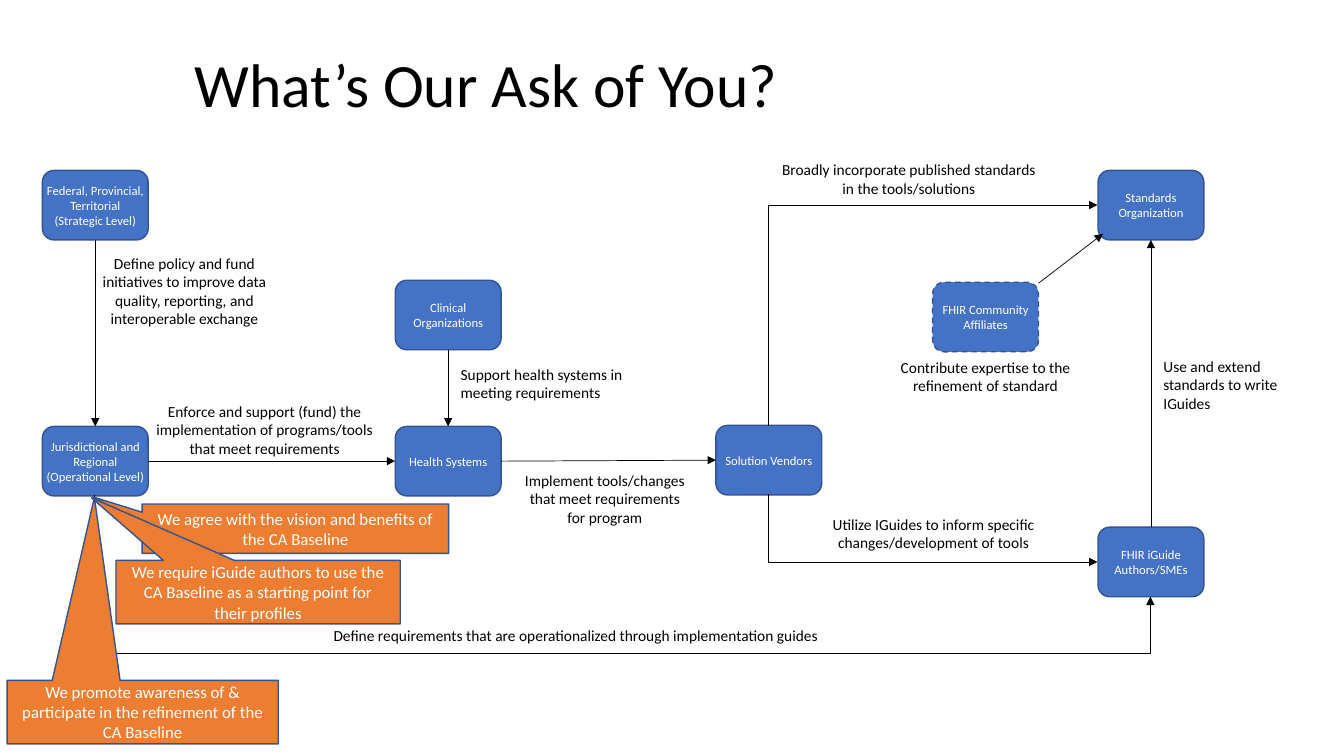
from lxml import etree
from pptx import Presentation
from pptx.dml.color import RGBColor
from pptx.enum import dml, shapes, text
from pptx.oxml import ns
from pptx.util import Inches, Pt

BLUE = RGBColor(0x44, 0x72, 0xC4)
OUTLINE = RGBColor(0x32, 0x54, 0x91)
ORANGE = RGBColor(0xED, 0x7D, 0x31)
BLACK = RGBColor(0, 0, 0)
WHITE = RGBColor(0xFF, 0xFF, 0xFF)
FONT = "Calibri"
NODE_W, NODE_H = 1.05, 0.69
TOP, LEFT, BOTTOM, RIGHT = range(4)  # connection sites of a node
CENTER, START = text.PP_ALIGN.CENTER, text.PP_ALIGN.LEFT

# name: (left, top, wording)
NODES = {
    "vendors": (7.1, 4.22, "Solution Vendors"),
    "standards": (10.89, 1.69, "Standards Organization"),
    "authors": (10.89, 5.23, "FHIR iGuide Authors/SMEs"),
    "health": (3.92, 4.23, "Health Systems"),
    "regional": (0.42, 4.23, "Jurisdictional and Regional (Operational Level)"),
    "affiliates": (9.25, 2.8, "FHIR Community Affiliates"),
    "clinical": (3.92, 2.78, "Clinical Organizations"),
    "federal": (0.42, 1.69, "Federal, Provincial, Territorial (Strategic Level)"),
}

# left, top, width, height, alignment, wording
LABELS = [
    (0.81, 2.47, 2.04, 0.84, CENTER, "Define policy and fund initiatives to improve data "
     "quality, reporting, and interoperable exchange"),
    (11.44, 3.49, 1.58, 0.66, START, "Use and extend standards to write IGuides"),
    (3.21, 6.16, 5.16, 0.29, START,
     "Define requirements that are operationalized through implementation guides"),
    (1.37, 3.94, 2.51, 0.66, CENTER, "Enforce and support (fund) the implementation of "
     "programs/tools that meet requirements"),
    (5.08, 4.62, 1.84, 0.66, CENTER,
     "Implement tools/changes that meet requirements for program"),
    (7.62, 1.54, 2.79, 0.47, CENTER,
     "Broadly incorporate published standards in the tools/solutions"),
    (7.63, 5.06, 3.26, 0.47, CENTER,
     "Utilize IGuides to inform specific changes/development of tools"),
    (4.47, 3.57, 1.96, 0.47, START, "Support health systems in meeting requirements"),
    (8.71, 3.5, 2.13, 0.47, CENTER, "Contribute expertise to the refinement of standard"),
]

STRAIGHT_ARROWS = [
    ("federal", BOTTOM, "regional", TOP),
    ("clinical", BOTTOM, "health", TOP),
    ("regional", RIGHT, "health", LEFT),
    ("health", RIGHT, "vendors", LEFT),
    ("authors", TOP, "standards", BOTTOM),
]

# left, top, width, height, pointer adjustments, wording
CALLOUTS = [
    (1.41, 5, 3.04, 0.49, (-0.661, -0.645),
     "We agree with the vision and benefits of the CA Baseline"),
    (1.15, 5.56, 2.82, 0.63, (-0.586, -1.487),
     "We require iGuide authors to use the CA Baseline as a starting point for their profiles"),
    (0.07, 6.75, 2.69, 0.63, (-0.178, -3.38),
     "We promote awareness of & participate in the refinement of the CA Baseline"),
]


def write(sp, wording, size, color, align=CENTER):
    tf = sp.text_frame
    tf.text = wording
    tf.word_wrap = True
    p = tf.paragraphs[0]
    p.alignment = align
    font = p.runs[0].font
    font.name, font.size, font.color.rgb = FONT, Pt(size), color
    return tf


def add_box(s, kind, box, fill, wording, size):
    sp = s.shapes.add_shape(kind, *map(Inches, box))
    sp.shadow.inherit = False
    sp.fill.solid()
    sp.fill.fore_color.rgb = fill
    sp.line.color.rgb = OUTLINE
    sp.line.width = Pt(1)
    tf = write(sp, wording, size, WHITE)
    tf.vertical_anchor = text.MSO_ANCHOR.MIDDLE
    return sp


def add_node(s, left, top, wording):
    sp = add_box(s, shapes.MSO_SHAPE.ROUNDED_RECTANGLE, (left, top, NODE_W, NODE_H),
                 BLUE, wording, 9)
    sp.text_frame.margin_left = sp.text_frame.margin_right = 0
    return sp


def add_callout(s, left, top, width, height, pointer, wording):
    sp = add_box(s, shapes.MSO_SHAPE.RECTANGULAR_CALLOUT, (left, top, width, height),
                 ORANGE, wording, 12)
    sp.adjustments[0], sp.adjustments[1] = pointer


def add_label(s, left, top, width, height, align, wording):
    sp = s.shapes.add_textbox(*map(Inches, (left, top, width, height)))
    write(sp, wording, 11, BLACK, align)


def add_arrow(s, x1, y1, x2, y2, kind=shapes.MSO_CONNECTOR.STRAIGHT):
    line = s.shapes.add_connector(kind, *map(Inches, (x1, y1, x2, y2)))
    line.line.color.rgb = BLACK
    line.line.width = Pt(0.5)
    etree.SubElement(line.line._get_or_add_ln(), ns.qn("a:tailEnd"), type="triangle")
    etree.SubElement(line._element.spPr, ns.qn("a:effectLst"))
    return line


def link(s, start, start_site, end, end_site):
    line = add_arrow(s, 0, 0, 1, 1)
    line.begin_connect(start, start_site)
    line.end_connect(end, end_site)


def add_elbow(s, left, top, width, height, angle, flips, preset, bend=None):
    """Elbow arrow whose unrotated frame is turned by angle degrees."""
    line = add_arrow(s, left, top, left + width, top + height, shapes.MSO_CONNECTOR.ELBOW)
    xfrm = line._element.spPr.find(ns.qn("a:xfrm"))
    xfrm.set("rot", str(angle * 60000))
    for flip in flips:
        xfrm.set(flip, "1")
    geom = line._element.spPr.find(ns.qn("a:prstGeom"))
    geom.set("prst", preset)
    if bend is not None:
        guides = geom.find(ns.qn("a:avLst"))
        etree.SubElement(guides, ns.qn("a:gd"), name="adj1", fmla=f"val {round(bend * 100000)}")


def add_title(s, wording):
    title = s.shapes.title
    title.left, title.top, title.width, title.height = map(Inches, (1.83, 0.14, 11.5, 1.45))
    tf = write(title, wording, 44, BLACK, START)
    tf.vertical_anchor = text.MSO_ANCHOR.MIDDLE
    tf.paragraphs[0].line_spacing = 0.9


def main():
    prs = Presentation()
    prs.slide_width, prs.slide_height = Inches(13.33), Inches(7.5)
    s = prs.slides.add_slide(prs.slide_layouts[5])
    add_title(s, "What’s Our Ask of You?")

    # Participants
    nodes = {name: add_node(s, *node) for name, node in NODES.items()}
    nodes["affiliates"].line.dash_style = dml.MSO_LINE.DASH

    # Descriptions of the relations
    for label in LABELS:
        add_label(s, *label)

    # Straight arrows
    for start, start_site, end, end_site in STRAIGHT_ARROWS:
        link(s, nodes[start], start_site, nodes[end], end_site)
    add_arrow(s, 10.3, 2.81, 10.94, 2.32)

    # Elbows: regional to authors, vendors to standards, vendors to authors
    add_elbow(s, 5.67, 0.18, 1.01, 10.47, 270, ["flipH"], "bentConnector3", 1.558)
    add_elbow(s, 8.16, 1.5, 2.19, 3.26, 90, ["flipH", "flipV"], "bentConnector2")
    add_elbow(s, 8.92, 3.61, 0.67, 3.26, 270, ["flipH"], "bentConnector2")

    # Asks
    for callout in CALLOUTS:
        add_callout(s, *callout)

    prs.save("out.pptx")


if __name__ == "__main__":
    main()
